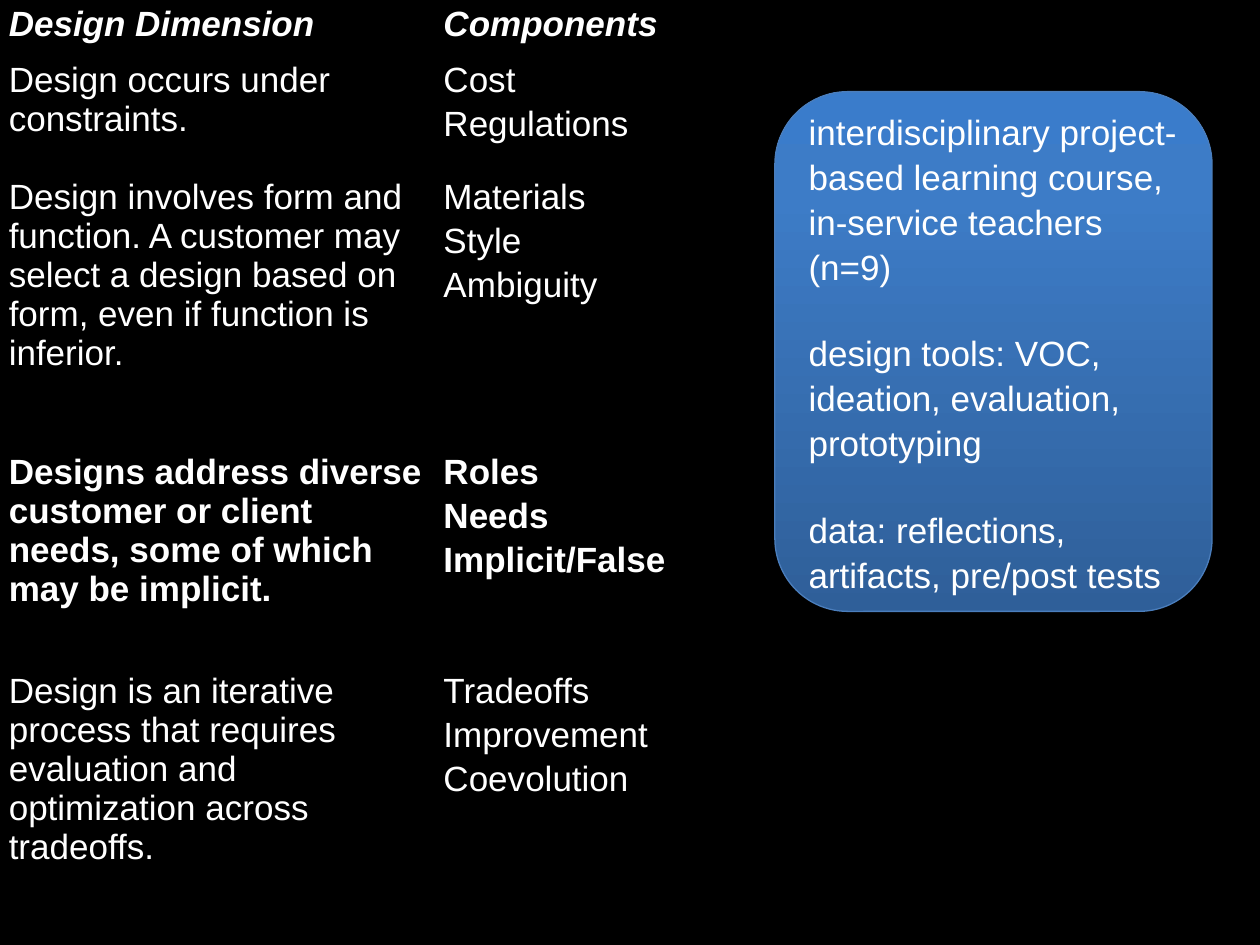
from copy import deepcopy

from pptx import Presentation
from pptx.dml.color import RGBColor
from pptx.enum.shapes import MSO_SHAPE
from pptx.enum.text import MSO_ANCHOR, PP_ALIGN
from pptx.oxml.ns import qn
from pptx.util import Inches, Pt

ROUNDED = MSO_SHAPE.ROUNDED_RECTANGLE
MIDDLE, LEFT = MSO_ANCHOR.MIDDLE, PP_ALIGN.LEFT
NO_GRID = "{2D5ABB26-0587-4C30-8999-92F81FD0307C}"
COLORS = {"back": "000000", "text": "FFFFFF", "line": "4B7EBC"}
GRADIENT = [(0, "2F5F99"), (0.8, "3D7CC7"), (1, "3A7CCB")]

W, H = 10, 7.5
TABLE_TOP = 0.04
COLS = [3.45, 6.53]
ROWS = [
    (0.44, "Design Dimension", ["Components"], {"bold": True, "italic": True}),
    (0.93, "Design occurs under constraints.", ["Cost", "Regulations"], {}),
    (2.18, "Design involves form and function. A customer may select a design "
           "based on form, even if function is inferior.",
     ["Materials", "Style", "Ambiguity"], {}),
    (1.74, "Designs address diverse customer or client needs, some of which "
           "may be implicit.",
     ["Roles", "Needs", "Implicit/False"], {"bold": True}),
    (2.18, "Design is an iterative process that requires evaluation and "
           "optimization across tradeoffs.",
     ["Tradeoffs", "Improvement", "Coevolution"], {}),
]
STUDY_BOX = (0.615 * W, 0.097 * H, 0.347 * W, 0.55 * H)
STUDY = [
    "interdisciplinary project-based learning course, in-service teachers (n=9)",
    "design tools: VOC, ideation, evaluation, prototyping",
    "data: reflections, artifacts, pre/post tests",
]


def rgb(value):
    return RGBColor.from_string(value)


def write(tf, lines, bold=False, italic=False, after=0, gap=0, spacing=None):
    tf.word_wrap = True
    for i, line in enumerate(lines):
        p = tf.add_paragraph() if i else tf.paragraphs[0]
        p.alignment = LEFT
        p.space_after = Pt(after)
        p.space_before = Pt(gap if i else 0)
        p.line_spacing = spacing
        r = p.add_run()
        r.text = line
        r.font.name, r.font.size = "Arial", Pt(20)
        r.font.bold, r.font.italic = bold, italic
        r.font.color.rgb = rgb(COLORS["text"])


def add_dimensions(slide):
    heights = [row[0] for row in ROWS]
    frame = slide.shapes.add_table(
        len(ROWS), len(COLS), 0, Inches(TABLE_TOP),
        Inches(sum(COLS)), Inches(sum(heights)))
    table = frame.table
    table.first_row = table.horz_banding = False
    frame._element.find(".//" + qn("a:tableStyleId")).text = NO_GRID
    for col, width in zip(table.columns, COLS):
        col.width = Inches(width)
    for row, (height, dimension, components, style) in zip(table.rows, ROWS):
        row.height = Inches(height)
        for cell, lines in zip(row.cells, ([dimension], components)):
            cell.fill.background()
            cell.margin_left = cell.margin_right = Inches(0.07)
            cell.margin_top = cell.margin_bottom = 0
            write(cell.text_frame, lines, after=3, **style)


def add_study(slide):
    s = slide.shapes.add_shape(ROUNDED, *map(Inches, STUDY_BOX))
    s.shadow.inherit = False
    s.fill.gradient()
    s.fill.gradient_angle = 90
    stops = s._element.spPr.find(".//" + qn("a:gsLst"))
    stops.append(deepcopy(stops[-1]))
    for stop, (position, color) in zip(s.fill.gradient_stops, GRADIENT):
        stop.position = position
        stop.color.rgb = rgb(color)
    s.line.color.rgb = rgb(COLORS["line"])
    s.line.width = Pt(0.75)
    s.text_frame.vertical_anchor = MIDDLE
    write(s.text_frame, STUDY, gap=24, spacing=1.07)


def main():
    prs = Presentation()
    prs.slide_width, prs.slide_height = Inches(W), Inches(H)
    slide = prs.slides.add_slide(prs.slide_layouts[6])
    slide.background.fill.solid()
    slide.background.fill.fore_color.rgb = rgb(COLORS["back"])
    add_dimensions(slide)
    add_study(slide)
    prs.save("out.pptx")


if __name__ == "__main__":
    main()
